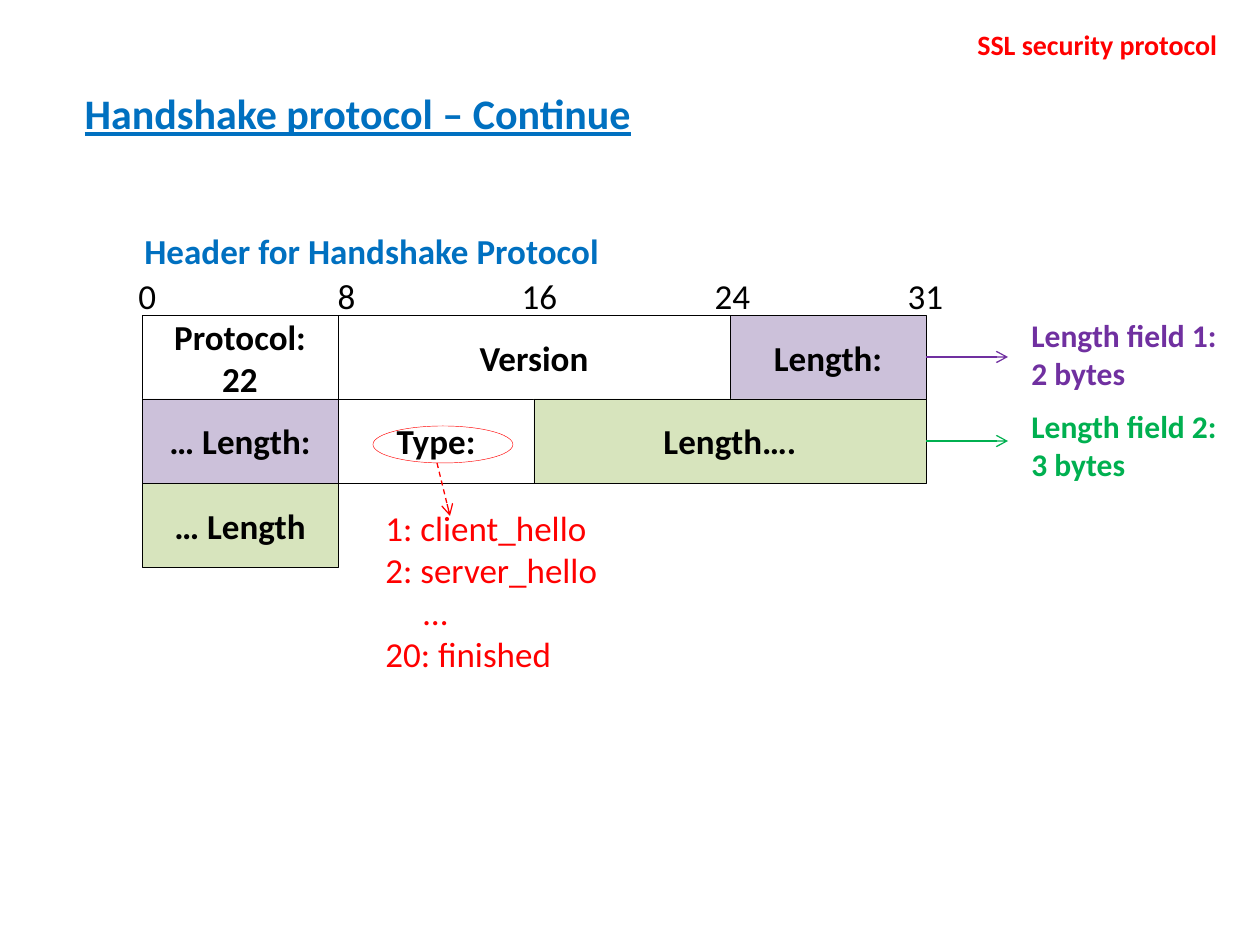
"""Build the slide on the header of the handshake protocol."""
import lxml.etree
import pptx
import pptx.dml.color
import pptx.enum.dml
import pptx.enum.shapes
import pptx.enum.text
import pptx.oxml
import pptx.oxml.ns
import pptx.util

THEME = {
    "font": "Calibri",
    "sizes": {"title": 24, "body": 20, "note": 18, "corner": 16},
    "colours": {
        "black": "000000", "blue": "0070C0", "red": "FF0000", "purple": "7030A0",
        "green": "00B050", "lilac": "CCC1DA", "lime": "D7E4BD",
    },
    "thin": 0.25,
    "arrow": 0.75,
}
PIXELS_PER_INCH = 126
GRID_LEFT, GRID_TOP = 142, 315
BYTE_WIDTH, ROW_HEIGHT = 196, 84
HEADER_FIELDS = [
    ("Protocol: 22", 0, 0, 1, None),
    ("Version", 0, 1, 2, None),
    ("Length:", 0, 3, 1, "lilac"),
    ("… Length:", 1, 0, 1, "lilac"),
    ("Type:", 1, 1, 1, None),
    ("Length….", 1, 2, 2, "lime"),
    ("… Length", 2, 0, 1, "lime"),
]
LENGTH_NOTES = [
    ("Length:", ["Length field 1:", "2 bytes"], "purple", 310),
    ("Length….", ["Length field 2:", "3 bytes"], "green", 401),
]


def px(pixels):
    """Turn pixels into EMU."""
    return pptx.util.Emu(round(pixels * 914400 / PIXELS_PER_INCH))


def colour(name):
    """Return a theme colour."""
    return pptx.dml.color.RGBColor.from_string(THEME["colours"][name])


def apply_format(target, values):
    """Set each attribute of the target from a dict."""
    for name, value in values.items():
        setattr(target, name, value)


def write_text(frame, lines, colour_name, size="body", frame_format=None,
               paragraph_format=None, **font_format):
    """Write one formatted paragraph for each line."""
    apply_format(frame, frame_format or {})
    frame.text = "\n".join(lines)
    for paragraph in frame.paragraphs:
        apply_format(paragraph, paragraph_format or {})
        apply_format(paragraph.font, {
            "name": THEME["font"],
            "size": pptx.util.Pt(THEME["sizes"][size]), **font_format})
        paragraph.font.color.rgb = colour(colour_name)


def add_label(slide, box, lines, colour_name, size="body", wrap=False, **font_format):
    """Add a text box and return its text frame."""
    frame = slide.shapes.add_textbox(*map(px, box)).text_frame
    write_text(frame, lines, colour_name, size, {
        "word_wrap": wrap,
        "auto_size": pptx.enum.text.MSO_AUTO_SIZE.SHAPE_TO_FIT_TEXT}, **font_format)
    return frame


def add_outline(slide, kind, box, line_colour, fill=None):
    """Add a thinly outlined shape with an optional fill."""
    shape = slide.shapes.add_shape(kind, *map(px, box))
    shape.shadow.inherit = False
    if fill:
        shape.fill.solid()
        shape.fill.fore_color.rgb = colour(fill)
    else:
        shape.fill.background()
    shape.line.color.rgb = colour(line_colour)
    shape.line.width = pptx.util.Pt(THEME["thin"])
    return shape


def add_field(slide, text, row, column, span, fill):
    """Add a header field that spans whole bytes of the grid."""
    box = (GRID_LEFT + column * BYTE_WIDTH, GRID_TOP + row * ROW_HEIGHT,
           span * BYTE_WIDTH, ROW_HEIGHT)
    shape = add_outline(slide, pptx.enum.shapes.MSO_SHAPE.RECTANGLE, box, "black", fill)
    write_text(
        shape.text_frame, [text], "black", bold=True,
        frame_format={"word_wrap": True,
                      "vertical_anchor": pptx.enum.text.MSO_ANCHOR.MIDDLE},
        paragraph_format={"alignment": pptx.enum.text.PP_ALIGN.CENTER})
    return shape


def add_arrow(slide, start, end, colour_name, dash=None):
    """Add a straight connector with an open arrowhead at its end."""
    connector = slide.shapes.add_connector(
        pptx.enum.shapes.MSO_CONNECTOR.STRAIGHT, *map(px, (*start, *end)))
    connector.line.color.rgb = colour(colour_name)
    apply_format(connector.line, {
        "width": pptx.util.Pt(THEME["arrow"]), "dash_style": dash})
    properties = connector.element.spPr
    lxml.etree.SubElement(
        properties.find(pptx.oxml.ns.qn("a:ln")),
        pptx.oxml.ns.qn("a:tailEnd"), type="arrow")
    lxml.etree.SubElement(properties, pptx.oxml.ns.qn("a:effectLst"))
    return connector


def add_bit_scale(slide):
    """Add the bit numbers, centred on evenly spaced tab stops."""
    numbers = ["0", "8", "16", "24", "31"]
    frame = add_label(slide, (126, 268, 1050, 55), [""], "black", wrap=True)
    paragraph = frame.paragraphs[0]
    paragraph.text = "\t".join(numbers)
    properties = paragraph._p.get_or_add_pPr()
    stops = pptx.oxml.parse_xml(
        f'<a:tabLst {pptx.oxml.ns.nsdecls("a")}/>')
    for index in range(len(numbers) - 1):
        lxml.etree.SubElement(stops, pptx.oxml.ns.qn("a:tab"),
                              pos=str(px(208 + 193 * index)), algn="ctr")
    properties.insert(0, stops)


def add_title(slide):
    """Place and format the title."""
    title = slide.shapes.title
    apply_format(title, dict(zip(
        ("left", "top", "width", "height"), map(px, (72, 81, 597, 63)))))
    write_text(
        title.text_frame, ["Handshake protocol – Continue"], "blue", "title",
        {"word_wrap": False,
         "auto_size": pptx.enum.text.MSO_AUTO_SIZE.SHAPE_TO_FIT_TEXT,
         "vertical_anchor": pptx.enum.text.MSO_ANCHOR.TOP},
        {"alignment": pptx.enum.text.PP_ALIGN.LEFT}, bold=True, underline=True)


def add_type_values(slide):
    """Circle the type field and list its values."""
    frame = add_label(slide, (373, 500, 239, 183),
                      ["1: client_hello", "2: server_hello", "…", "20: finished"], "red")
    frame.paragraphs[2]._p.get_or_add_pPr().set("marL", str(px(38)))
    add_outline(slide, pptx.enum.shapes.MSO_SHAPE.OVAL, (373, 426, 140, 37), "red")
    add_arrow(slide, (437, 463), (450, 516), "red",
              pptx.enum.dml.MSO_LINE.DASH)


def main():
    """Build and save the slide."""
    presentation = pptx.Presentation()
    apply_format(presentation, {"slide_width": px(1260), "slide_height": px(945)})
    slide = presentation.slides.add_slide(presentation.slide_layouts[5])
    add_title(slide)
    add_label(slide, (132, 223, 484, 55), ["Header for Handshake Protocol"],
              "blue", bold=True)
    fields = {field[0]: add_field(slide, *field) for field in HEADER_FIELDS}
    add_bit_scale(slide)
    add_type_values(slide)
    for field_name, lines, colour_name, top in LENGTH_NOTES:
        field = fields[field_name]
        middle = (field.top + field.height / 2) / px(1)
        arrow = add_arrow(slide, (926, middle), (1008, middle), colour_name)
        arrow.begin_connect(field, 3)
        add_label(slide, (1019, top, 213, 89), lines, colour_name, "note", bold=True)
    add_label(slide, (965, 21, 268, 47), ["SSL security protocol"], "red", "corner",
              bold=True)
    presentation.save("out.pptx")


if __name__ == "__main__":
    main()
